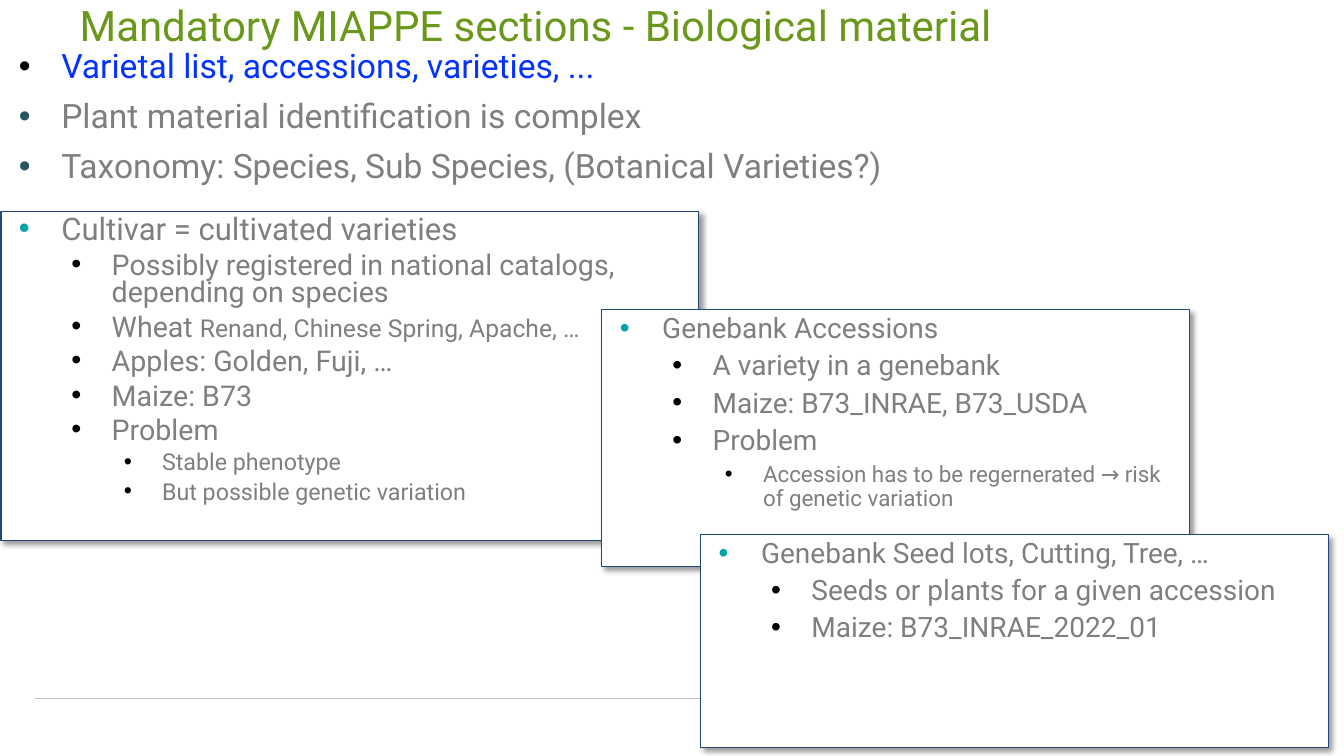
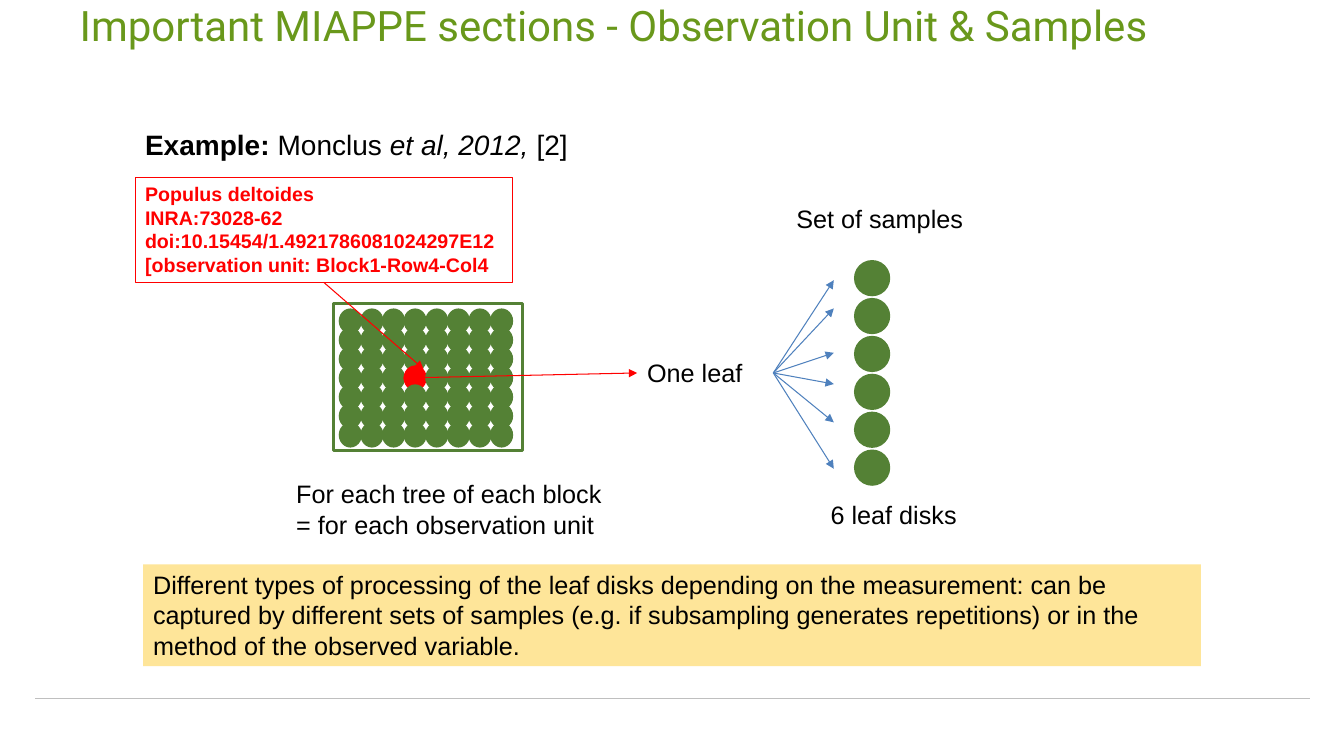
import dataclasses
import typing

import pptx
import pptx.dml.color
import pptx.enum.shapes
import pptx.enum.text
import pptx.oxml.ns
import pptx.util
from lxml import etree

Inches = pptx.util.Inches
Pt = pptx.util.Pt
SHAPE = pptx.enum.shapes.MSO_SHAPE
ANCHOR = pptx.enum.text.MSO_ANCHOR

COLOURS = {
    "title": "69981B", "rule": "BFBFBF", "white": "FFFFFF", "black": "000000",
    "grey": "7F7F7F", "blue": "0432FF", "teal": "00A3A6", "deep_teal": "275662",
    "navy": "1F497D", "leaf": "548135", "red": "FF0000", "arrow": "4F81BD",
    "note": "FEE599",
}
HEADING_FONT = "Roboto"
LABEL_FONT = "Arial"
# Left margin, hanging indent (inches) and space before (points) by list level
LEVELS = [(0.5, -0.42, 10), (1.0, -0.4, 5), (1.5, -0.38, 5)]


class Frame(typing.NamedTuple):
    left: float
    top: float
    width: float
    height: float

    def lengths(self) -> list[int]:
        return [Inches(value) for value in self]


class Point(typing.NamedTuple):
    x: float
    y: float


@dataclasses.dataclass(frozen=True)
class Item:
    text: str
    size: float
    level: int = 0
    bullet: str = "black"
    colour: str = "grey"
    tail: str = ""
    tail_size: float = 0


@dataclasses.dataclass(frozen=True)
class Panel:
    frame: Frame
    spacing: float
    items: list[Item]


@dataclasses.dataclass(frozen=True)
class Label:
    frame: Frame
    text: str
    size: float = 18
    colour: str = "black"
    bold: bool = False
    fill: str = ""
    outline: str = ""


def rgb(name: str) -> pptx.dml.color.RGBColor:
    return pptx.dml.color.RGBColor.from_string(COLOURS[name])


def add_xml(parent, tag: str, **attributes: str):
    return etree.SubElement(parent, pptx.oxml.ns.qn(tag), attributes)


def style_span(span, font: str, size: float, colour: str, bold: bool = False) -> None:
    span.font.name = font
    span.font.size = Pt(size)
    span.font.color.rgb = rgb(colour)
    span.font.bold = bold


def add_figure(shapes, kind, frame: Frame, fill: str = "", outline: str = "",
               weight: float = 0.75):
    figure = shapes.add_shape(kind, *frame.lengths())
    figure.shadow.inherit = False
    if fill:
        figure.fill.solid()
        figure.fill.fore_color.rgb = rgb(fill)
    else:
        figure.fill.background()
    if outline:
        figure.line.color.rgb = rgb(outline)
        figure.line.width = Pt(weight)
    else:
        figure.line.fill.background()
    return figure


def add_line(page, start: Point, end: Point, colour: str, arrow: bool = True):
    line = page.shapes.add_connector(
        pptx.enum.shapes.MSO_CONNECTOR.STRAIGHT,
        *[Inches(value) for value in (*start, *end)])
    line.line.color.rgb = rgb(colour)
    line.line.width = Pt(0.75)
    properties = line._element.spPr
    if arrow:
        add_xml(properties.find(pptx.oxml.ns.qn("a:ln")), "a:tailEnd", type="triangle")
    add_xml(properties, "a:effectLst")
    return line


def add_label(page, label: Label):
    if label.fill or label.outline:
        box = add_figure(page.shapes, SHAPE.RECTANGLE, label.frame, label.fill, label.outline)
    else:
        box = page.shapes.add_textbox(*label.frame.lengths())
    frame = box.text_frame
    frame.word_wrap = True
    frame.vertical_anchor = ANCHOR.TOP
    frame.text = label.text
    for para in frame.paragraphs:
        para.alignment = pptx.enum.text.PP_ALIGN.LEFT
        for span in para.runs:
            style_span(span, LABEL_FONT, label.size, label.colour, label.bold)
    return box


def fill_list(box, items: list[Item], spacing: float) -> None:
    frame = box.text_frame
    frame.word_wrap = True
    frame.vertical_anchor = ANCHOR.TOP
    frame.text = "\n".join(item.text for item in items)
    for index, (para, item) in enumerate(zip(frame.paragraphs, items)):
        margin, indent, before = LEVELS[item.level]
        para.level = item.level
        para.alignment = pptx.enum.text.PP_ALIGN.LEFT
        para.line_spacing = spacing
        para.space_before = Pt(before if index else 0)
        properties = para._p.get_or_add_pPr()
        properties.set("marL", str(Inches(margin)))
        properties.set("indent", str(Inches(indent)))
        add_xml(add_xml(properties, "a:buClr"), "a:srgbClr", val=COLOURS[item.bullet])
        add_xml(properties, "a:buFont", typeface=LABEL_FONT)
        add_xml(properties, "a:buChar", char="•")
        style_span(para.runs[0], HEADING_FONT, item.size, item.colour)
        if item.tail:
            span = para.add_run()
            span.text = item.tail
            style_span(span, HEADING_FONT, item.tail_size, item.colour)


def add_panel(page, panel: Panel) -> None:
    box = add_figure(page.shapes, SHAPE.RECTANGLE, panel.frame, "white", "navy")
    effects = box._element.spPr.find(pptx.oxml.ns.qn("a:effectLst"))
    shadow = add_xml(effects, "a:outerShdw", blurRad=str(Pt(4)), dist=str(Pt(3)),
                     dir=str(45 * 60000), algn="tl", rotWithShape="0")
    colour = add_xml(shadow, "a:srgbClr", val=COLOURS["black"])
    add_xml(colour, "a:alpha", val="40000")
    fill_list(box, panel.items, panel.spacing)


def add_page(deck, title: str):
    """Blank page with the shared title and footer rule."""
    page = deck.slides.add_slide(deck.slide_layouts[6])
    add_line(page, Point(0.35, 6.93), Point(12.99, 6.93), "rule", arrow=False)
    box = page.shapes.add_textbox(*Frame(0.79, 0, 11.2, 0.56).lengths())
    frame = box.text_frame
    frame.word_wrap = True
    frame.margin_left = 0
    frame.vertical_anchor = ANCHOR.MIDDLE
    frame.text = title
    frame.paragraphs[0].line_spacing = 0.9
    style_span(frame.paragraphs[0].runs[0], HEADING_FONT, 30, "title")
    return page


# Content of the biological material page
INTRODUCTION = [
    Item("Varietal list, accessions, varieties, ...", 24, colour="blue"),
    Item("Plant material identification is complex", 24, bullet="deep_teal"),
    Item("Taxonomy: Species, Sub Species, (Botanical Varieties?)", 24, bullet="deep_teal"),
]
PANELS = [
    Panel(Frame(0.01, 2.1, 6.92, 3.26), 0.8, [
        Item("Cultivar = cultivated varieties", 22.2, bullet="teal"),
        Item("Possibly registered in national catalogs, depending on species", 20.4, 1),
        Item("Wheat ", 20.4, 1, tail="Renand, Chinese Spring, Apache, …", tail_size=17.6),
        Item("Apples: Golden, Fuji, …", 20.4, 1),
        Item("Maize: B73", 20.4, 1),
        Item("Problem", 20.4, 1),
        Item("Stable phenotype", 16.6, 2),
        Item("But possible genetic variation", 16.6, 2),
    ]),
    Panel(Frame(5.97, 3.07, 5.83, 2.55), 0.9, [
        Item("Genebank Accessions", 20, bullet="teal"),
        Item("A variety in a genebank", 20, 1),
        Item("Maize: B73_INRAE, B73_USDA", 20, 1),
        Item("Problem", 20, 1),
        Item("Accession has to be regernerated → risk of genetic variation", 16, 2),
    ]),
    Panel(Frame(6.95, 5.3, 6.23, 2.12), 0.9, [
        Item("Genebank Seed lots, Cutting, Tree, …", 20, bullet="teal"),
        Item("Seeds or plants for a given accession", 20, 1),
        Item("Maize: B73_INRAE_2022_01", 20, 1),
    ]),
]

# Content of the observation unit page
CAPTIONS = [
    Label(Frame(2.84, 4.7, 3.26, 0.71),
          "For each tree of each block\n= for each observation unit"),
    Label(Frame(8.14, 4.9, 1.46, 0.4), "6 leaf disks"),
    Label(Frame(7.8, 1.97, 1.87, 0.4), "Set of samples"),
    Label(Frame(1.42, 5.6, 10.49, 1.01),
          "Different types of processing of the leaf disks depending on the measurement: "
          "can be captured by different sets of samples (e.g. if subsampling generates "
          "repetitions) or in the method of the observed variable.", fill="note"),
]
ONE_LEAF = Label(Frame(6.32, 3.5, 1.35, 0.4), "One leaf")
TREE_ID = Label(Frame(1.34, 1.76, 3.74, 1.04),
                "Populus deltoides\nINRA:73028-62\ndoi:10.15454/1.4921786081024297E12\n"
                "[observation unit: Block1-Row4-Col4", 14, "red", True, outline="red")
TREE_ROWS, TREE_COLUMNS = 7, 8
SAMPLED_TREE = (3, 3)
DISK_COUNT = 6
ARROW_TIPS = [2.78, 3.06, 3.5, 3.81, 4.19, 4.65]


def add_citation(page) -> None:
    box = add_label(page, Label(Frame(1.34, 1.22, 9.74, 0.44), "Example: ", 20, bold=True))
    para = box.text_frame.paragraphs[0]
    for text, italic in [("Monclus ", False), ("et al, 2012, ", True), ("[2]", False)]:
        span = para.add_run()
        span.text = text
        style_span(span, LABEL_FONT, 20, "black")
        span.font.italic = italic


def add_block(page) -> None:
    """Framed grid of trees, with the sampled one in red."""
    block = page.shapes.add_group_shape()
    add_figure(block.shapes, SHAPE.RECTANGLE, Frame(3.31, 3.01, 1.87, 1.46),
               outline="leaf", weight=2.25)
    column_step = 1.5 / (TREE_COLUMNS - 1)
    row_step = 1.13 / (TREE_ROWS - 1)
    for row in range(TREE_ROWS):
        for column in range(TREE_COLUMNS):
            frame = Frame(3.36 + column * column_step, 3.06 + row * row_step, 0.23, 0.25)
            colour = "red" if (row, column) == SAMPLED_TREE else "leaf"
            add_figure(block.shapes, SHAPE.OVAL, frame, colour)


def build_material_page(deck) -> None:
    page = add_page(deck, "Mandatory MIAPPE sections - Biological material")
    box = page.shapes.add_textbox(*Frame(0.01, 0.44, 9.57, 1.61).lengths())
    fill_list(box, INTRODUCTION, 0.9)
    for panel in PANELS:
        add_panel(page, panel)


def build_observation_page(deck) -> None:
    page = add_page(deck, "Important MIAPPE sections - Observation Unit & Samples")
    add_block(page)
    add_citation(page)
    for caption in CAPTIONS:
        add_label(page, caption)

    # From the identified tree to one leaf
    leaf_box = add_label(page, ONE_LEAF)
    tree_box = add_label(page, TREE_ID)
    add_line(page, Point(4, 3.75), Point(6.32, 3.7), "red").end_connect(leaf_box, 1)
    add_line(page, Point(3.21, 2.8), Point(4.2, 3.66), "red").begin_connect(tree_box, 2)

    # From the leaf to its disks
    for tip in ARROW_TIPS:
        arrow = add_line(page, Point(7.67, 3.7), Point(8.27, tip), "arrow")
        arrow.begin_connect(leaf_box, 3)
    disk_step = 1.88 / (DISK_COUNT - 1)
    for index in range(DISK_COUNT):
        frame = Frame(8.47, 2.58 + index * disk_step, 0.36, 0.36)
        add_figure(page.shapes, SHAPE.OVAL, frame, "leaf")


def main() -> None:
    deck = pptx.Presentation()
    deck.slide_width = Inches(13.33)
    deck.slide_height = Inches(7.5)
    build_material_page(deck)
    build_observation_page(deck)
    deck.save("out.pptx")


if __name__ == "__main__":
    main()
